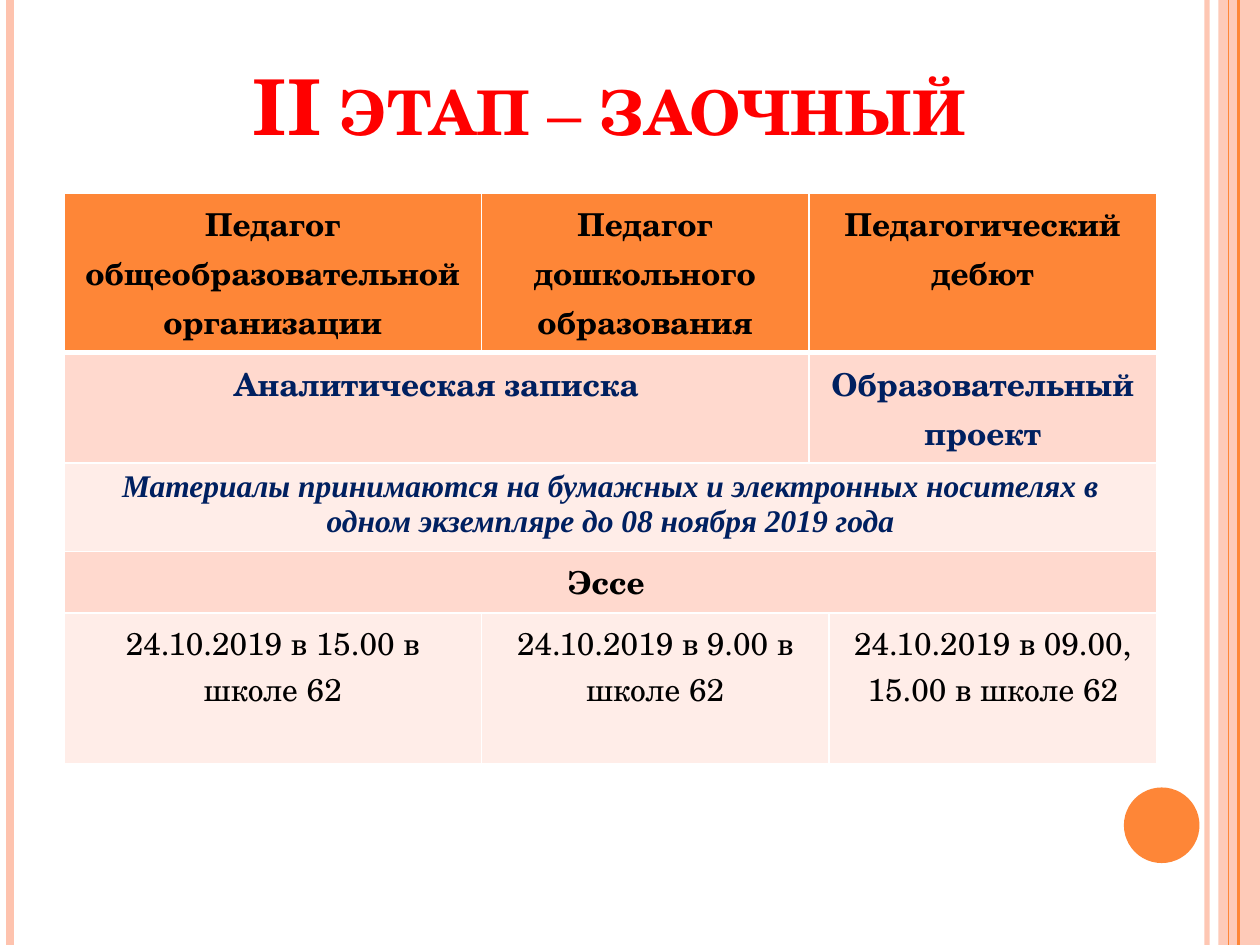
import pptx
import pptx.util
import pptx.dml.color
import pptx.enum.shapes
import pptx.enum.text
import pptx.oxml
import pptx.oxml.ns
from lxml import etree

Inches = pptx.util.Inches
Pt = pptx.util.Pt
RGBColor = pptx.dml.color.RGBColor
MSO_SHAPE = pptx.enum.shapes.MSO_SHAPE
CENTER = pptx.enum.text.PP_ALIGN.CENTER
qn = pptx.oxml.ns.qn

ORANGE = RGBColor(0xFE, 0x86, 0x37)
PEACH = RGBColor(0xFE, 0xC3, 0xAE)
BAND_DARK = RGBColor(0xFF, 0xD9, 0xCE)
BAND_LIGHT = RGBColor(0xFF, 0xED, 0xE8)
RED = RGBColor(0xFF, 0, 0)
NAVY = RGBColor(0, 0x20, 0x60)
BLACK = RGBColor(0, 0, 0)
SERIF = "TeX Gyre Schola"
TIMES = "Times New Roman"


def set_alpha(fmt, percent):
    color = fmt.find(".//" + qn("a:srgbClr"))
    etree.SubElement(color, qn("a:alpha"), val=str(percent * 1000))


def set_borders(cell, widths):
    tcPr = cell._tc.get_or_add_tcPr()
    for i, (side, width) in enumerate(widths.items()):
        ln = etree.Element(qn("a:ln" + side), w=str(Pt(width)))
        fill = etree.SubElement(ln, qn("a:solidFill"))
        etree.SubElement(fill, qn("a:srgbClr"), val="FFFFFF")
        tcPr.insert(i, ln)


prs = pptx.Presentation()
prs.slide_width = Inches(10)
prs.slide_height = Inches(7.5)
s = prs.slides.add_slide(prs.slide_layouts[6])

shapes = [
    (MSO_SHAPE.RECTANGLE, 9.67, 0, 0.33, 7.5, PEACH, 87),
    (MSO_SHAPE.OVAL, 8.92, 6.25, 0.6, 0.6, ORANGE, 100),
]
for kind, x, y, w, h, color, alpha in shapes:
    sp = s.shapes.add_shape(kind, Inches(x), Inches(y), Inches(w), Inches(h))
    sp.shadow.inherit = False
    sp.fill.solid()
    sp.fill.fore_color.rgb = color
    sp.line.fill.background()
    set_alpha(sp._element.spPr, alpha)

stripes = [
    (9.58, PEACH, 3, 93),
    (0.08, PEACH, 4.5, 100),
    (9.83, ORANGE, 1.5, 100),
    (9.75, ORANGE, 0.75, 100),
]
for x, color, width, alpha in stripes:
    line = s.shapes.add_connector(
        pptx.enum.shapes.MSO_CONNECTOR.STRAIGHT,
        Inches(x), Inches(0), Inches(x), Inches(7.5))
    line.line.color.rgb = color
    line.line.width = Pt(width)
    set_alpha(line._element.spPr, alpha)
    etree.SubElement(line._element.spPr, qn("a:effectLst"))

title = s.shapes.add_textbox(Inches(0.75), Inches(0), Inches(8.17), Inches(1.25))
tf = title.text_frame
tf.word_wrap = True
tf.vertical_anchor = pptx.enum.text.MSO_ANCHOR.BOTTOM
p = tf.paragraphs[0]
p.alignment = CENTER
for text, bold in [("II этап ", True), ("– ", False), ("заочный", True)]:
    r = p.add_run()
    r.text = text
    r.font.name = SERIF
    r.font.size = Pt(44)
    r.font.bold = bold
    r.font.color.rgb = RED
    r._r.get_or_add_rPr().set("cap", "small")

col_widths = [3.31, 2.6, 0.16, 2.6]
row_heights = [1.25, 0.87, 0.66, 0.48, 1.2]
row_fills = [ORANGE, BAND_DARK, BAND_LIGHT, BAND_DARK, BAND_LIGHT]
row_styles = [
    (SERIF, BLACK, True, False, Pt(28)),
    (SERIF, NAVY, True, False, Pt(28)),
    (TIMES, NAVY, True, True, 1.0),
    (SERIF, BLACK, True, False, Pt(28)),
    (SERIF, BLACK, False, False, Pt(26.5)),
]
row_cells = [
    [(0, 1, "Педагог общеобразовательной организации"),
     (1, 1, "Педагог дошкольного образования"),
     (2, 2, "Педагогический дебют")],
    [(0, 2, "Аналитическая записка"), (2, 2, "Образовательный проект")],
    [(0, 4, "Материалы принимаются на бумажных и электронных носителях "
            "в одном экземпляре до 08 ноября 2019 года")],
    [(0, 4, "Эссе ")],
    [(0, 1, "24.10.2019 в 15.00 в школе 62"),
     (1, 2, "24.10.2019 в 9.00 в школе 62"),
     (3, 1, "24.10.2019 в 09.00, 15.00 в школе 62")],
]

table = s.shapes.add_table(
    len(row_heights), len(col_widths), Inches(0.51), Inches(1.53),
    Inches(sum(col_widths)), Inches(sum(row_heights))).table
for column, width in zip(table.columns, col_widths):
    column.width = Inches(width)
for row, height in zip(table.rows, row_heights):
    row.height = Inches(height)

for i, cells in enumerate(row_cells):
    font, color, bold, italic, spacing = row_styles[i]
    for col, span, text in cells:
        cell = table.cell(i, col)
        if span > 1:
            cell.merge(table.cell(i, col + span - 1))
        cell.text_frame.text = text
        p = cell.text_frame.paragraphs[0]
        p.alignment = CENTER
        p.line_spacing = spacing
        r = p.runs[0]
        r.font.name = font
        r.font.size = Pt(18)
        r.font.bold = bold
        r.font.italic = italic
        r.font.color.rgb = color
    for cell in table.rows[i].cells:
        cell.fill.solid()
        cell.fill.fore_color.rgb = row_fills[i]
        set_borders(cell, {"L": 1, "R": 1, "T": 3 if i == 1 else 1, "B": 3 if i == 0 else 1})

prs.save("out.pptx")
